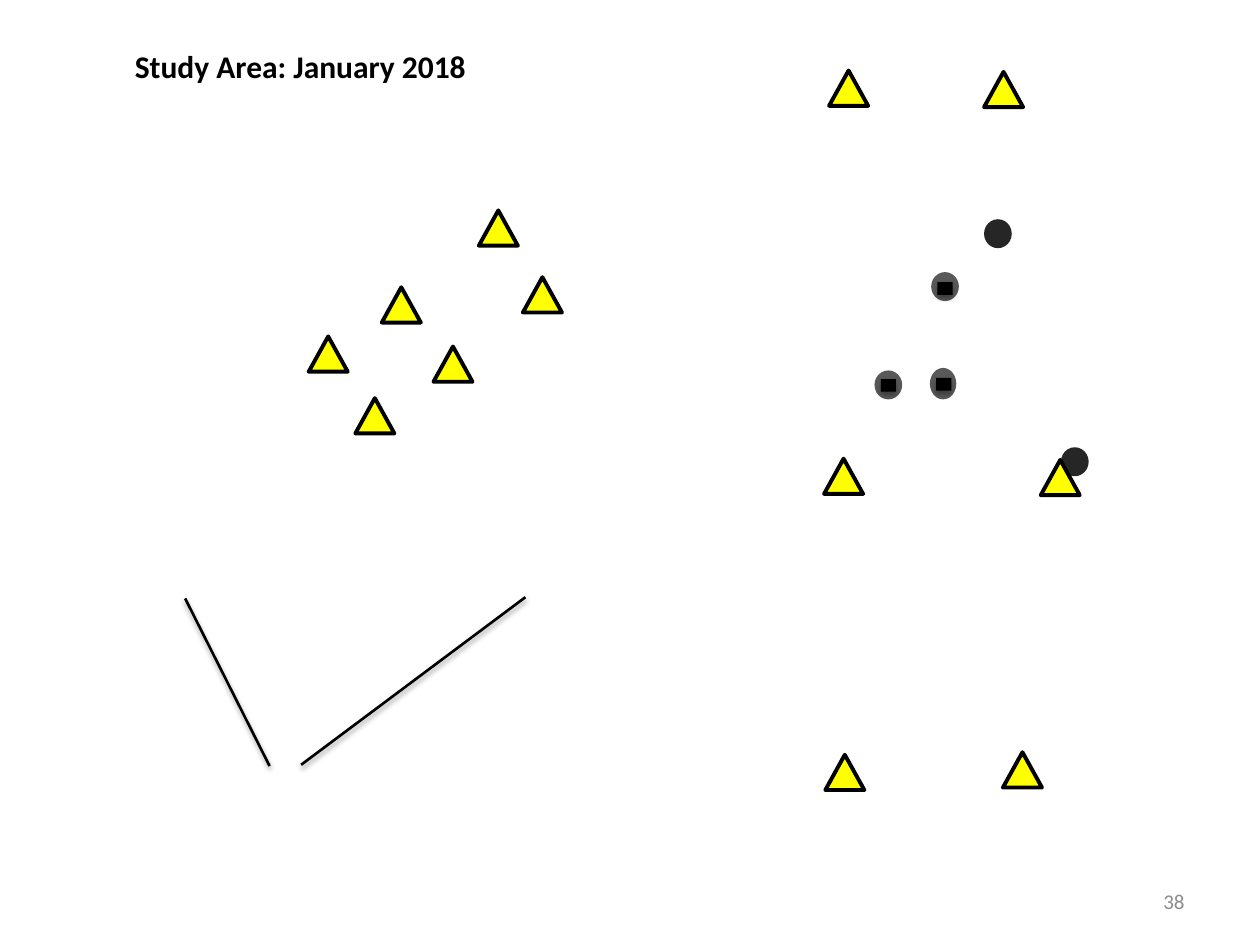
from lxml.etree import SubElement
from pptx import Presentation
from pptx.dml.color import RGBColor
from pptx.enum.shapes import MSO_CONNECTOR, MSO_SHAPE
from pptx.enum.text import MSO_ANCHOR, PP_ALIGN
from pptx.oxml.ns import qn
from pptx.util import Inches, Pt

TITLE_ONLY = 5


def color(code):
    return RGBColor.from_string(code)


def shade(shape, alpha=0, blur=3.1, dist=1.8):
    """Give the shape a soft shadow below it, or none when alpha is 0."""
    effects = SubElement(shape._element.spPr, qn("a:effectLst"))
    if alpha:
        outer = SubElement(effects, qn("a:outerShdw"), blurRad=str(Pt(blur)),
                           dist=str(Pt(dist)), dir="5400000", rotWithShape="0")
        black = SubElement(outer, qn("a:srgbClr"), val="000000")
        SubElement(black, qn("a:alpha"), val=str(alpha * 1000))


def write(shape, text, size, ink="000000", bold=False,
          align=PP_ALIGN.LEFT, anchor=MSO_ANCHOR.TOP):
    frame = shape.text_frame
    frame.word_wrap = True
    frame.vertical_anchor = anchor
    frame.margin_left = frame.margin_right = Inches(0.1)
    frame.margin_top = frame.margin_bottom = Inches(0.05)
    par = frame.paragraphs[0]
    par.alignment = align
    run = par.add_run()
    run.text = text
    font = run.font
    font.name, font.size, font.bold = "Calibri", Pt(size), bold
    font.color.rgb = color(ink)


def mark(shapes, kind, left, top, width, height, fill, line=0, alpha=0):
    shape = shapes.add_shape(kind, Inches(left), Inches(top),
                             Inches(width), Inches(height))
    shape.fill.solid()
    shape.fill.fore_color.rgb = color(fill)
    if line:
        shape.line.color.rgb = color("000000")
        shape.line.width = Pt(line)
    else:
        shape.line.fill.background()
    shade(shape, alpha)


def place_title(slide, left, top, width, height):
    title = slide.shapes.title
    title.left, title.top = Inches(left), Inches(top)
    title.width, title.height = Inches(width), Inches(height)
    title.fill.solid()
    title.fill.fore_color.rgb = color("FFFFFF")
    write(title, "Study Area: January 2018", 18, bold=True)


def place_dots(slide, left, top):
    """Round sites; three of them hold a small square."""
    shapes = slide.shapes.add_group_shape().shapes
    dots = [(0.44, 1.18, 0.21, 0.25, "595959"), (0, 1.2, 0.22, 0.23, "595959"),
            (0.45, 0.42, 0.22, 0.23, "595959"), (0.87, 0, 0.22, 0.23, "262626"),
            (1.48, 1.81, 0.22, 0.23, "262626")]
    for x, y, width, height, fill in dots:
        mark(shapes, MSO_SHAPE.OVAL, left + x, top + y, width, height, fill)
    for x, y in [(0.5, 0.5), (0.49, 1.26), (0.05, 1.27)]:
        mark(shapes, MSO_SHAPE.RECTANGLE, left + x, top + y, 0.12, 0.1,
             "000000", alpha=35)


def place_peaks(slide, left, top, spots):
    """Yellow triangles at offsets from the corner of their area."""
    for x, y in spots:
        mark(slide.shapes, MSO_SHAPE.ISOSCELES_TRIANGLE, left + x, top + y,
             0.31, 0.28, "FFFF00", line=2.25)


def place_lines(slide, left, top):
    """Two guide lines that run up from the inset."""
    for x1, y1, x2, y2 in [(0.67, 1.34, 0, 0.01), (0.92, 1.33, 2.7, 0)]:
        line = slide.shapes.add_connector(
            MSO_CONNECTOR.STRAIGHT, Inches(left + x1), Inches(top + y1),
            Inches(left + x2), Inches(top + y2))
        line.line.color.rgb = color("000000")
        line.line.width = Pt(1.5)
        shade(line, 38, dist=1.6)


def place_number(slide, left, top, width, height):
    box = slide.shapes.add_textbox(Inches(left), Inches(top),
                                   Inches(width), Inches(height))
    write(box, "38", 12, ink="8C8C8C", align=PP_ALIGN.RIGHT,
          anchor=MSO_ANCHOR.MIDDLE)


def main():
    deck = Presentation()
    deck.slide_width, deck.slide_height = Inches(10), Inches(7.5)
    slide = deck.slides.add_slide(deck.slide_layouts[TITLE_ONLY])

    place_title(slide, 0.97, 0.32, 3.1, 0.4)
    place_dots(slide, 6.94, 1.74)
    # West area
    place_peaks(slide, 2.45, 1.67, [(0, 1), (0.37, 1.49), (1.35, 0),
                                    (1.7, 0.53), (0.99, 1.08), (0.58, 0.61)])
    # East area
    place_peaks(slide, 6.54, 0.56, [(0.04, 0), (1.27, 0.01), (0, 3.08),
                                    (1.72, 3.09), (0.01, 5.43), (1.42, 5.41)])
    place_lines(slide, 1.47, 4.74)
    place_number(slide, 7.17, 6.95, 2.33, 0.4)

    deck.save("out.pptx")


if __name__ == "__main__":
    main()
